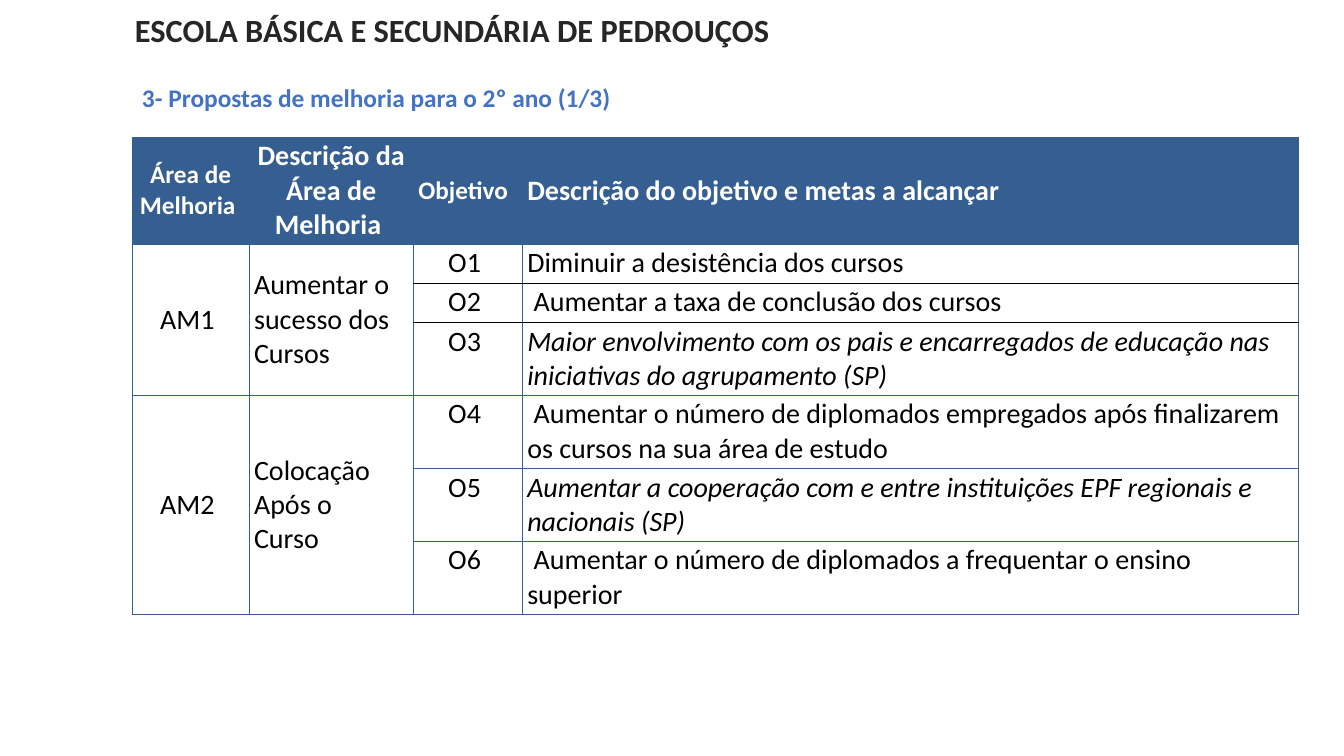
from lxml import etree
from pptx import Presentation
from pptx.dml.color import RGBColor
from pptx.enum import text
from pptx.oxml import ns
from pptx.util import Inches, Pt

BLUE, BLACK, WHITE = "365F91", "000000", "FFFFFF"
HARD = chr(160)  # no-break space
MID, TOP = text.MSO_ANCHOR.MIDDLE, text.MSO_ANCHOR.TOP
LEFT, MIDST = text.PP_ALIGN.LEFT, text.PP_ALIGN.CENTER


def write(frame, words, size, hue, bold=False, slant=False, align=LEFT):
    frame.word_wrap = True
    para = frame.paragraphs[0]
    para.alignment = align
    run = para.add_run()
    run.text = words
    font = run.font
    font.name, font.size, font.bold, font.italic = "Calibri", Pt(size), bold, slant
    font.color.rgb = RGBColor.from_string(hue)


def edge(cell, side, hue, width):
    """Draw one border of a cell; side is L, R, T or B."""
    line = etree.SubElement(cell._tc.get_or_add_tcPr(), ns.qn("a:ln" + side), w=str(Pt(width)))
    fill = etree.SubElement(line, ns.qn("a:solidFill"))
    etree.SubElement(fill, ns.qn("a:srgbClr"), val=hue)


deck = Presentation()
deck.slide_width, deck.slide_height = Inches(13.33), Inches(7.5)
slide = deck.slides.add_slide(deck.slide_layouts[6])

title = slide.shapes.add_textbox(Inches(1.24), Inches(0.05), Inches(8.33), Inches(0.48))
write(title.text_frame, "ESCOLA BÁSICA E SECUNDÁRIA DE PEDROUÇOS", 23.1, "262626", bold=True)

# Table: one list per row; None marks a cell merged into the one above
rows = [
    ["Área de Melhoria" + HARD, "Descrição da Área de Melhoria" + HARD, "Objetivo",
     "Descrição do objetivo e metas a alcançar" + HARD],
    ["AM1", "Aumentar o sucesso dos Cursos", "O1", "Diminuir a desistência dos cursos"],
    [None, None, "O2", HARD + "Aumentar a taxa de conclusão dos cursos"],
    [None, None, "O3", "Maior envolvimento com os pais e encarregados de educação nas "
     "iniciativas do agrupamento (SP)"],
    ["AM2", "Colocação Após o Curso", "O4", HARD + "Aumentar o número de diplomados "
     "empregados após finalizarem os cursos na sua área de estudo"],
    [None, None, "O5", "Aumentar a cooperação com e entre instituições EPF regionais e "
     "nacionais (SP)"],
    [None, None, "O6", HARD + "Aumentar o número de diplomados a frequentar o ensino superior"],
]
widths = [1.16, 1.63, 1.08, 7.7]
heights = [1.06, 0.39, 0.39, 0.72, 0.73, 0.72, 0.73]
rules = {1: (BLACK, 0.25), 2: (BLACK, 0.5)}  # lines below rows that are not blue

frame = slide.shapes.add_table(len(rows), len(widths), Inches(1.31), Inches(1.36),
                               Inches(sum(widths)), Inches(sum(heights)))
table = frame.table
table.first_row = table.horz_banding = False
for col, width in zip(table.columns, widths):
    col.width = Inches(width)
for row, height in zip(table.rows, heights):
    row.height = Inches(height)
for top in (1, 4):
    for c in (0, 1):
        table.cell(top, c).merge(table.cell(top + 2, c))

for r, row in enumerate(rows):
    for c, words in enumerate(row):
        cell = table.cell(r, c)
        head, goal = r == 0, c >= 2
        above, below = [rules.get(i, (BLUE, 0.6)) if goal else (BLUE, 0.6) for i in (r - 1, r)]
        for side, rule in zip("LRTB", [(BLUE, 0.6), (BLUE, 0.6), above, below]):
            edge(cell, side, *rule)
        cell.margin_left = cell.margin_right = Inches(0.05)
        cell.margin_top = cell.margin_bottom = Inches(0.02)
        cell.vertical_anchor = MID if head or not goal else TOP
        if head:
            cell.fill.solid()
            cell.fill.fore_color.rgb = RGBColor.from_string(BLUE)
            write(cell.text_frame, words, 18 if c in (0, 2) else 20, WHITE, bold=True,
                  align=LEFT if goal else MIDST)
            continue
        cell.fill.background()
        if words:
            write(cell.text_frame, words + HARD, 20, BLACK, slant=words.endswith("(SP)"),
                  align=MIDST if c in (0, 2) else LEFT)

part = slide.shapes.add_textbox(Inches(1.31), Inches(0.64), Inches(11.38), Inches(0.72))
part.text_frame.vertical_anchor = MID
part.text_frame.margin_bottom = Inches(0.12)
write(part.text_frame, "3- Propostas de melhoria para o 2º ano (1/3)", 18.1, "4472C4", bold=True)

deck.save("out.pptx")
